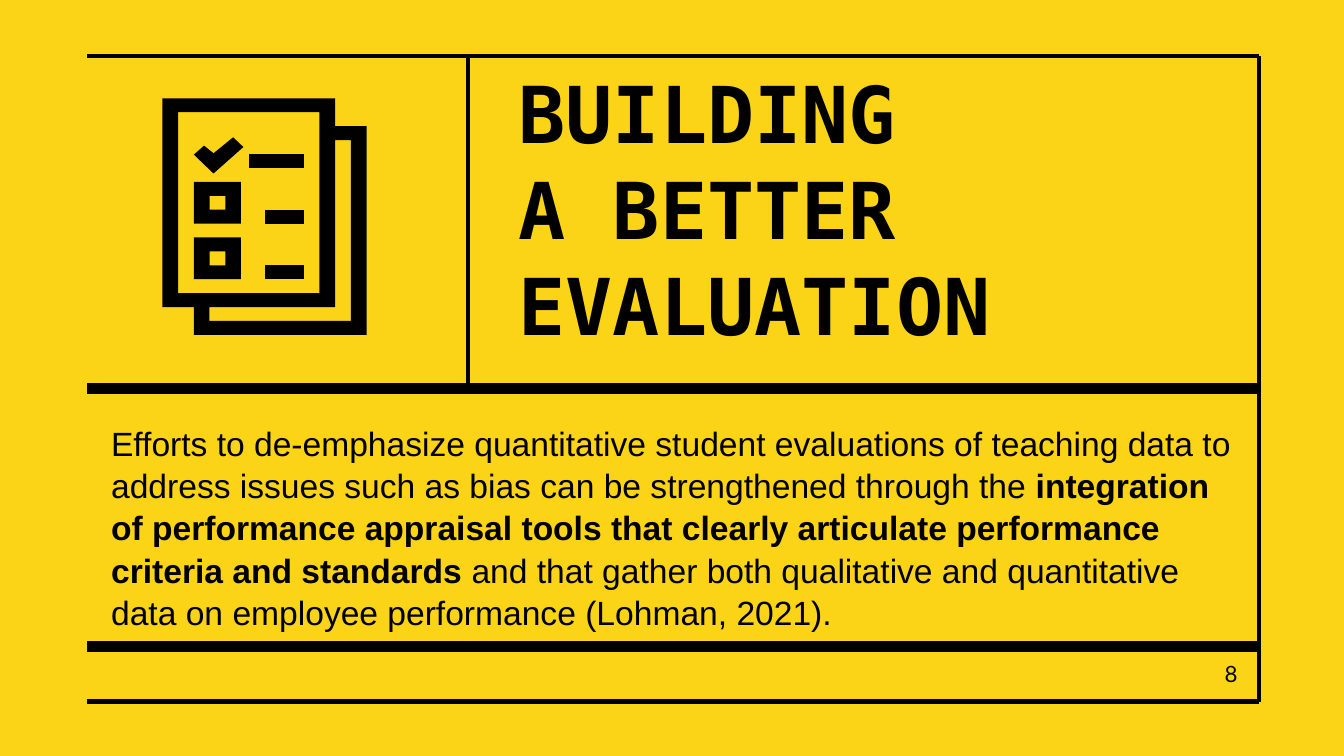
from dataclasses import dataclass

import pptx
import pptx.dml.color
import pptx.enum.shapes
import pptx.enum.text
import pptx.util
from lxml import etree
from pptx.oxml.ns import qn

Cm = pptx.util.Cm
Anchor = pptx.enum.text.MSO_ANCHOR
Align = pptx.enum.text.PP_ALIGN


@dataclass(frozen=True)
class Theme:
    background: str = "FBD317"
    ink: str = "000000"
    title_font: str = "DejaVu Sans Mono"
    body_font: str = "Arial"
    number_font: str = "Lato"
    title_size: float = 42
    body_size: float = 18
    number_size: float = 12
    thin: float = 2.25
    thick: float = 6


@dataclass(frozen=True)
class Box:
    left: float
    top: float
    width: float
    height: float

    @property
    def right(self):
        return self.left + self.width

    @property
    def bottom(self):
        return self.top + self.height

    def inner(self, dx, dy, width, height):
        return Box(self.left + dx, self.top + dy, width, height)


THEME = Theme()
ICON_COLUMNS, ICON_ROWS = 13, 17


def color(value):
    return pptx.dml.color.RGBColor.from_string(value)


def add_rule(slide, x1, y1, x2, y2, weight):
    rule = slide.shapes.add_connector(
        pptx.enum.shapes.MSO_CONNECTOR.STRAIGHT, Cm(x1), Cm(y1), Cm(x2), Cm(y2))
    rule.line.color.rgb = color(THEME.ink)
    rule.line.width = pptx.util.Pt(weight)
    etree.SubElement(rule._element.spPr, qn("a:effectLst"))


def add_run(paragraph, text, font, size, bold=False):
    run = paragraph.add_run()
    run.text = text
    run.font.name = font
    run.font.size = pptx.util.Pt(size)
    run.font.bold = bold
    run.font.color.rgb = color(THEME.ink)


def prepare_text(holder, box, anchor, align, inset_x, inset_y, spacing):
    holder.left, holder.top = Cm(box.left), Cm(box.top)
    holder.width, holder.height = Cm(box.width), Cm(box.height)
    frame = holder.text_frame
    frame.word_wrap = True
    frame.auto_size = pptx.enum.text.MSO_AUTO_SIZE.NONE
    frame.vertical_anchor = anchor
    frame.margin_left = frame.margin_right = Cm(inset_x)
    frame.margin_top = frame.margin_bottom = Cm(inset_y)
    paragraph = frame.paragraphs[0]
    paragraph.alignment = align
    paragraph.line_spacing = spacing
    paragraph.space_before = pptx.util.Pt(0)
    return paragraph


def rectangle(x1, y1, x2, y2):
    return [(x1, y1), (x1, y2), (x2, y2), (x2, y1)]


def hole(x1, y1, x2, y2):
    return rectangle(x1, y1, x2, y2)[::-1]


def checklist_icon(slide, box):
    icon = slide.shapes.add_group_shape()

    def place(point):
        return (Cm(box.left + point[0] * box.width / ICON_COLUMNS),
                Cm(box.top + point[1] * box.height / ICON_ROWS))

    def add_outline(*contours):
        first, *others = [[place(point) for point in contour] for contour in contours]
        builder = icon.shapes.build_freeform(*first[0])
        builder.add_line_segments(first[1:], close=True)
        for contour in others:
            builder.move_to(*contour[0])
            builder.add_line_segments(contour[1:], close=True)
        part = builder.convert_to_shape()
        part.shadow.inherit = False
        part.fill.solid()
        part.fill.fore_color.rgb = color(THEME.ink)
        part.line.fill.background()

    front_page = hole(1, 1, 10, 14)
    back_page = [(12, 3), (12, 16), (3, 16), (3, 15), (11, 15), (11, 3)]
    pages = [(0, 0), (0, 15), (2, 15), (2, 17), (13, 17), (13, 2), (11, 2), (11, 0)]
    check = [(4.5, 2.8), (3.25, 3.95), (2.65, 3.4), (2, 4.05), (3.25, 5.4), (5.15, 3.5)]
    add_outline(pages, front_page, back_page)
    add_outline(check)
    add_outline(rectangle(5.5, 4, 9, 5))
    for top in (6, 10):
        add_outline(rectangle(2, top, 5, top + 3), hole(3, top + 1, 4, top + 2))
        add_outline(rectangle(6.5, top + 2, 9, top + 3))


def header(slide, box):
    divider = box.left + 7.19
    add_rule(slide, box.left, box.top, box.right, box.top, THEME.thin)
    add_rule(slide, divider, box.top, divider, box.bottom, THEME.thin)
    add_rule(slide, box.left, box.bottom, box.right, box.bottom, THEME.thick)
    checklist_icon(slide, box.inner(1.42, 0.8, 3.86, 4.47))
    title = prepare_text(slide.shapes.title, box.inner(8.05, 0.68, 13.49, 4.9),
                         Anchor.BOTTOM, Align.LEFT, 0.1, 0, 1.02)
    add_run(title, "BUILDING", THEME.title_font, THEME.title_size, True)
    title.add_line_break()
    add_run(title, "A BETTER EVALUATION", THEME.title_font, THEME.title_size, True)


def argument(slide, box):
    add_rule(slide, box.left, box.bottom, box.right, box.bottom, THEME.thick)
    body = prepare_text(slide.placeholders[1], box.inner(0.36, 0.61, 21.43, 3.12),
                        Anchor.TOP, Align.LEFT, 0.09, 0, 1.05)
    for text, bold in (
        ("Efforts to de-emphasize quantitative student evaluations of teaching data "
         "to address issues such as bias can be strengthened through the ", False),
        ("integration of performance appraisal tools that clearly articulate "
         "performance criteria and standards ", True),
        ("and that gather both qualitative and quantitative data on employee "
         "performance (Lohman, 2021).", False),
    ):
        add_run(body, text, THEME.body_font, THEME.body_size, bold)


def footer(slide, box):
    add_rule(slide, box.left, box.bottom, box.right, box.bottom, THEME.thin)
    number_box = slide.shapes.add_textbox(0, 0, 0, 0)
    number = prepare_text(number_box, box.inner(20.47, 0.28, 1.52, 0.48),
                          Anchor.MIDDLE, Align.RIGHT, 0.25, 0.25, 1.0)
    add_run(number, "8", THEME.number_font, THEME.number_size)


def main():
    deck = pptx.Presentation()
    deck.slide_width, deck.slide_height = Cm(25.4), Cm(14.29)
    slide = deck.slides.add_slide(deck.slide_layouts[0])
    slide.background.fill.solid()
    slide.background.fill.fore_color.rgb = color(THEME.background)

    frame = Box(1.65, 1.06, 22.15, 12.2)
    add_rule(slide, frame.right, frame.top, frame.right, frame.bottom, THEME.thin)
    header(slide, frame.inner(0, 0, frame.width, 6.28))
    argument(slide, frame.inner(0, 6.28, frame.width, 4.88))
    footer(slide, frame.inner(0, 11.16, frame.width, 1.04))
    deck.save("out.pptx")


if __name__ == "__main__":
    main()
